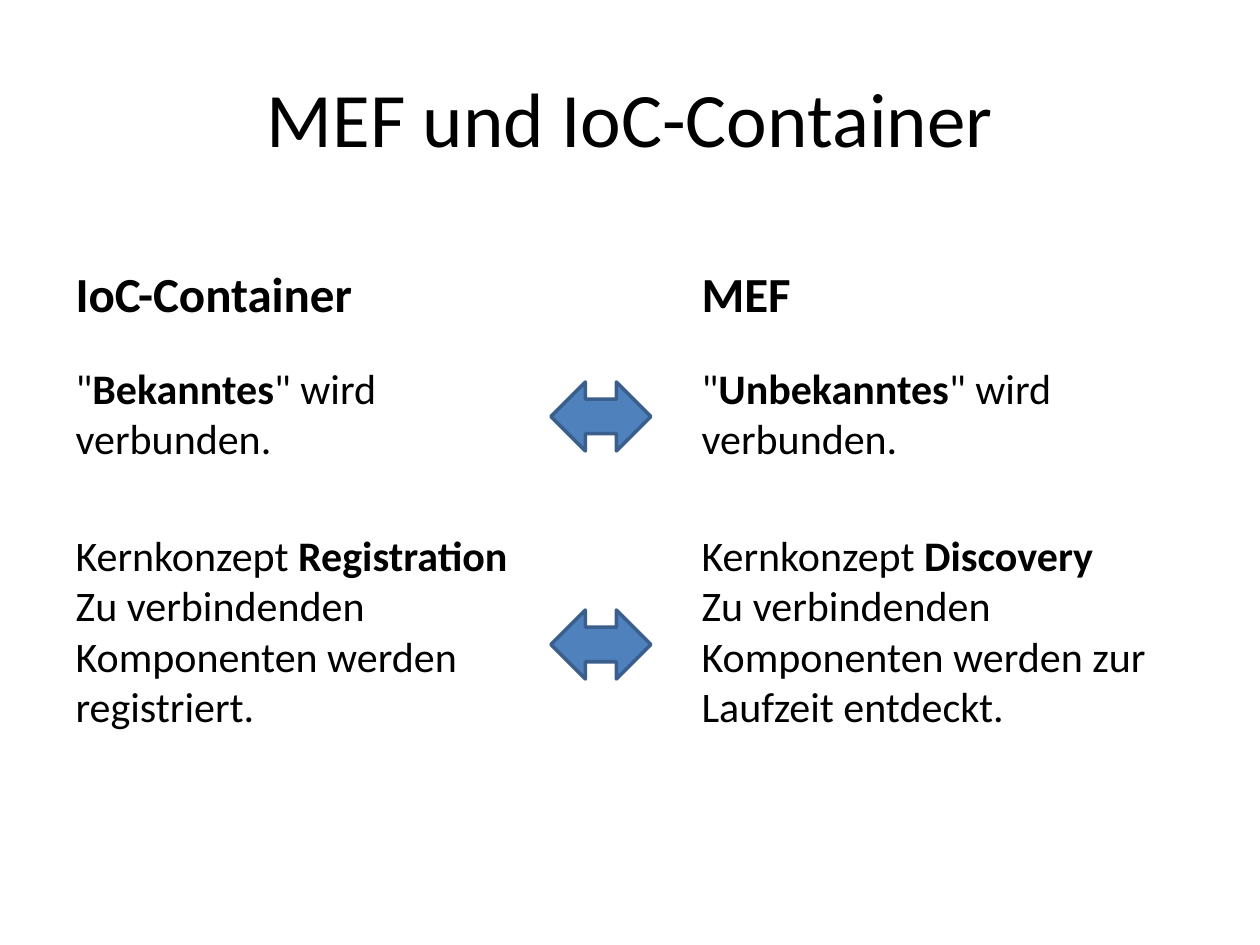
from pptx import Presentation
from pptx.dml.color import RGBColor
from pptx.enum.shapes import MSO_SHAPE
from pptx.enum.text import MSO_ANCHOR, MSO_AUTO_SIZE, PP_ALIGN
from pptx.oxml.ns import qn
from pptx.util import Pt

PX = 914400 // 126
BLACK = RGBColor(0x00, 0x00, 0x00)
BLUE = RGBColor(0x4F, 0x81, 0xBD)
DARK_BLUE = RGBColor(0x3A, 0x5F, 0x8C)
DOUBLE_ARROW = MSO_SHAPE.LEFT_RIGHT_ARROW
MIDDLE, BOTTOM, TOP = MSO_ANCHOR.MIDDLE, MSO_ANCHOR.BOTTOM, MSO_ANCHOR.TOP
LEFT, CENTER = PP_ALIGN.LEFT, PP_ALIGN.CENTER
NO_FIT = MSO_AUTO_SIZE.NONE
COMPARISON_LAYOUT = 4
FONT = "Calibri"

HEADING_HEIGHT = 88
BODY_OFFSET = 53
BODY_INSET = 68
PARAGRAPH_GAP = 38

COLUMNS = [
    (1, (63, 241, 557, 597), 528, "IoC-Container", [
        [('"', False), ("Bekanntes", True), ('" wird verbunden.', False)],
        [("Kernkonzept ", False), ("Registration\v", True),
         ("Zu verbindenden Komponenten werden\vregistriert.", False)],
    ]),
    (3, (689, 241, 557, 597), 507, "MEF", [
        [('"', False), ("Unbekanntes", True), ('" wird verbunden.', False)],
        [("Kernkonzept ", False), ("Discovery\v", True),
         ("Zu verbindenden Komponenten werden zur Laufzeit entdeckt.", False)],
    ]),
]
ARROWS = [(551, 382, 100, 69), (551, 610, 100, 69)]


def place(shape, left, top, width, height):
    shape.left, shape.top = left * PX, top * PX
    shape.width, shape.height = width * PX, height * PX


def prepare_frame(shape, anchor):
    frame = shape.text_frame
    frame.word_wrap = True
    frame.auto_size = NO_FIT
    frame.vertical_anchor = anchor
    return frame


def style_paragraph(para, size, bold=None, align=LEFT):
    para.alignment = align
    para.space_before = Pt(0)
    para.font.name = FONT
    para.font.size = Pt(size)
    para.font.bold = bold
    para.font.color.rgb = BLACK


def remove_bullet(para):
    properties = para._p.get_or_add_pPr()
    properties.set("marL", "0")
    properties.set("indent", "0")
    bullet = properties.makeelement(qn("a:buNone"), {})
    properties.insert_element_before(bullet, "a:tabLst", "a:defRPr", "a:extLst")


def add_runs(para, runs):
    for text, bold in runs:
        lines = text.split("\v")
        for number, line in enumerate(lines):
            if number:
                para.add_line_break()
            if line:
                span = para.add_run()
                span.text = line
                span.font.bold = bold


def fill_line(shape, box, text, size, anchor, bold, align):
    place(shape, *box)
    frame = prepare_frame(shape, anchor)
    frame.text = text
    style_paragraph(frame.paragraphs[0], size, bold, align)


def fill_column(page, index, box, body_width, heading, paragraphs):
    left, top, width, height = box
    heading_box = (left, top, width, HEADING_HEIGHT)
    fill_line(page.placeholders[index], heading_box, heading, 28, BOTTOM, True, LEFT)
    body = page.placeholders[index + 1]
    place(body, left, top + BODY_OFFSET, body_width, height - BODY_OFFSET)
    frame = prepare_frame(body, TOP)
    frame.margin_top = BODY_INSET * PX
    for number, runs in enumerate(paragraphs):
        para = frame.add_paragraph() if number else frame.paragraphs[0]
        add_runs(para, runs)
        style_paragraph(para, 24)
        if number:
            para.space_before = Pt(PARAGRAPH_GAP)
        remove_bullet(para)


def add_arrow(page, box):
    arrow = page.shapes.add_shape(DOUBLE_ARROW, *(length * PX for length in box))
    arrow.shadow.inherit = False
    arrow.fill.solid()
    arrow.fill.fore_color.rgb = BLUE
    arrow.line.color.rgb = DARK_BLUE
    arrow.line.width = Pt(2)


def main():
    deck = Presentation()
    deck.slide_width, deck.slide_height = 1260 * PX, 945 * PX
    page = deck.slides.add_slide(deck.slide_layouts[COMPARISON_LAYOUT])
    fill_line(page.shapes.title, (63, 38, 1134, 158), "MEF und IoC-Container",
              44, MIDDLE, False, CENTER)
    for column in COLUMNS:
        fill_column(page, *column)
    for box in ARROWS:
        add_arrow(page, box)
    deck.save("out.pptx")


if __name__ == "__main__":
    main()
